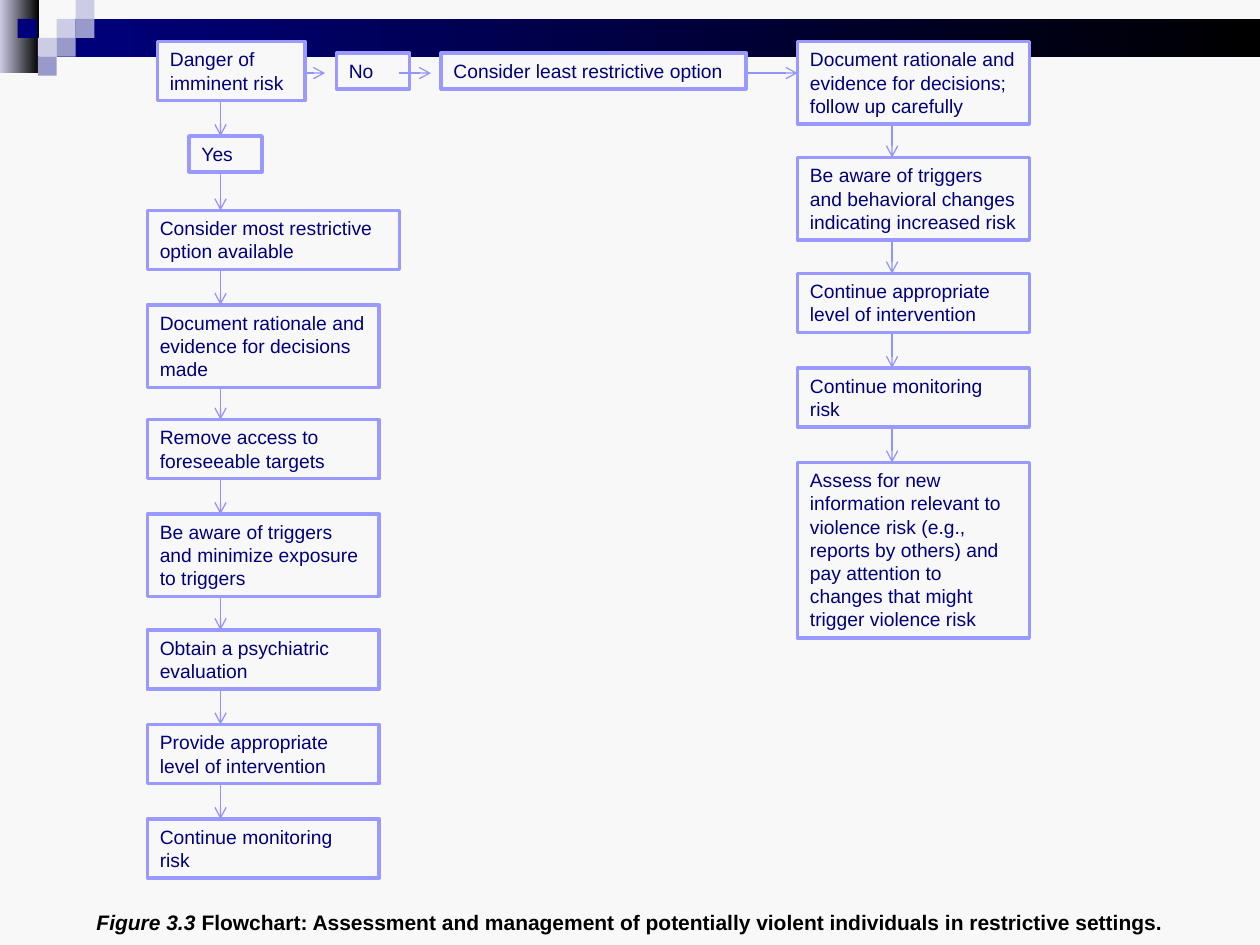
"""Build the flowchart slide on managing potentially violent individuals."""
from dataclasses import dataclass

from lxml import etree
from pptx import Presentation
from pptx.dml.color import RGBColor
from pptx.enum.shapes import MSO_CONNECTOR, MSO_SHAPE
from pptx.enum.text import MSO_ANCHOR, MSO_AUTO_SIZE, PP_ALIGN
from pptx.oxml.ns import qn
from pptx.util import Inches, Pt

RECTANGLE = MSO_SHAPE.RECTANGLE
STRAIGHT = MSO_CONNECTOR.STRAIGHT
TOP = MSO_ANCHOR.TOP
FIT_SHAPE = MSO_AUTO_SIZE.SHAPE_TO_FIT_TEXT
LEFT, CENTER = PP_ALIGN.LEFT, PP_ALIGN.CENTER


@dataclass(frozen=True)
class Theme:
    font: str = "Arial"
    step_size: float = 11
    caption_size: float = 12
    paper: str = "F8F8F8"
    navy: str = "00007D"
    black: str = "000000"
    lavender: str = "CCCCE6"
    violet: str = "9999CC"
    border: str = "9999FF"
    arrow: str = "9393FC"


THEME = Theme()
TILE = 0.15
ARROW_LENGTH = 0.33
ROW_Y = 0.58
STEP_WIDTH = 1.84

# Each step: top, width, left, number of lines, text.
RISK_STEPS = [
    (0.33, 1.17, 1.25, 2, "Danger of imminent risk"),
    (1.08, 0.58, 1.5, 1, "Yes"),
    (1.67, 2, 1.17, 2, "Consider most restrictive option available"),
    (2.42, STEP_WIDTH, 1.17, 3, "Document rationale and evidence for decisions made"),
    (3.33, STEP_WIDTH, 1.17, 2, "Remove access to foreseeable targets"),
    (4.08, STEP_WIDTH, 1.17, 3, "Be aware of triggers and minimize exposure to triggers"),
    (5, STEP_WIDTH, 1.17, 2, "Obtain a psychiatric evaluation"),
    (5.75, STEP_WIDTH, 1.17, 2, "Provide appropriate level of intervention"),
    (6.5, STEP_WIDTH, 1.17, 2, "Continue monitoring risk"),
]
NO_RISK_STEPS = [
    (0.33, STEP_WIDTH, 6.33, 3,
     "Document rationale and evidence for decisions; follow up carefully"),
    (1.25, STEP_WIDTH, 6.33, 3,
     "Be aware of triggers and behavioral changes indicating increased risk"),
    (2.17, STEP_WIDTH, 6.33, 2, "Continue appropriate level of intervention"),
    (2.92, STEP_WIDTH, 6.33, 2, "Continue monitoring risk"),
    (3.67, STEP_WIDTH, 6.33, 7,
     "Assess for new information relevant to violence risk (e.g., reports by "
     "others) and pay attention to changes that might trigger violence risk"),
]
NO_STEP = (0.42, 0.58, 2.67, 1, "No")
LEAST_RESTRICTIVE_STEP = (0.42, 2.42, 3.5, 1, "Consider least restrictive option")


def rgb(value):
    return RGBColor.from_string(value)


def add_text(paragraph, text, *, size, color, bold=False, italic=False, align=LEFT):
    """Append a formatted run to a paragraph."""
    paragraph.alignment = align
    run = paragraph.add_run()
    run.text = text
    run.font.name = THEME.font
    run.font.size = Pt(size)
    run.font.bold = bold
    run.font.italic = italic
    run.font.color.rgb = rgb(color)


def add_block(slide, left, top, width, height, *colors):
    """Add a borderless rectangle, filled solid or left to right with two colours."""
    block = slide.shapes.add_shape(
        RECTANGLE, Inches(left), Inches(top), Inches(width), Inches(height))
    block.shadow.inherit = False
    block.line.fill.background()
    if len(colors) == 1:
        block.fill.solid()
        block.fill.fore_color.rgb = rgb(colors[0])
    else:
        block.fill.gradient()
        block.fill.gradient_angle = 0
        for stop, color, position in zip(block.fill.gradient_stops, colors, (0, 1)):
            stop.color.rgb = rgb(color)
            stop.position = position
    return block


def add_step(slide, top, width, left, lines, text):
    """Add a bordered flowchart step as tall as its lines of text."""
    step = add_block(slide, left, top, width, 0.1 + 0.185 * lines, THEME.paper)
    step.line.color.rgb = rgb(THEME.border)
    step.line.width = Pt(2)
    frame = step.text_frame
    frame.word_wrap = True
    frame.auto_size = FIT_SHAPE
    frame.vertical_anchor = TOP
    add_text(frame.paragraphs[0], text, size=THEME.step_size, color=THEME.navy)


def add_arrow(slide, x1, y1, x2, y2):
    """Add a thin arrow with an open head at its end."""
    arrow = slide.shapes.add_connector(
        STRAIGHT, Inches(x1), Inches(y1), Inches(x2), Inches(y2))
    arrow.line.color.rgb = rgb(THEME.arrow)
    arrow.line.width = Pt(0.75)
    etree.SubElement(arrow.line._get_or_add_ln(), qn("a:tailEnd"), type="arrow")
    etree.SubElement(arrow._element.spPr, qn("a:effectLst"))


def add_header(slide):
    """Add the gradient bands and the mosaic of tiles."""
    add_block(slide, 0, 0, 0.31, 0.58, THEME.lavender, THEME.black)
    add_block(slide, 0.45, 0.15, 9.55, 0.3, THEME.navy, THEME.black)
    tiles = [(3, 1, THEME.lavender), (4, 0, THEME.lavender), (4, 1, THEME.violet),
             (2, 2, THEME.lavender), (3, 2, THEME.violet), (2, 3, THEME.violet)]
    for column, row, color in tiles:
        add_block(slide, column * TILE, row * TILE, TILE, TILE, color)
    add_block(slide, 0.14, TILE, TILE, TILE, THEME.navy)


def add_column(slide, steps, arrow_x):
    """Add steps from top to bottom, with an arrow down to each after the first."""
    for top, *_ in steps[1:]:
        add_arrow(slide, arrow_x, top - ARROW_LENGTH, arrow_x, top)
    for step in steps:
        add_step(slide, *step)


def add_caption(slide):
    """Add the centred figure caption."""
    caption = slide.shapes.add_textbox(Inches(0), Inches(7.17), Inches(10), Inches(0.3))
    frame = caption.text_frame
    frame.word_wrap = True
    frame.auto_size = FIT_SHAPE
    for text, italic in [
            ("Figure 3.3 ", True),
            ("Flowchart: Assessment and management of potentially violent "
             "individuals in restrictive settings.", False)]:
        add_text(frame.paragraphs[0], text, size=THEME.caption_size,
                 color=THEME.black, bold=True, italic=italic, align=CENTER)


def main():
    deck = Presentation()
    deck.slide_width, deck.slide_height = Inches(10), Inches(7.5)
    slide = deck.slides.add_slide(deck.slide_layouts[6])
    slide.background.fill.solid()
    slide.background.fill.fore_color.rgb = rgb(THEME.paper)
    add_header(slide)
    add_step(slide, *NO_STEP)
    for start, end in [(2.33, 2.58), (3.17, 3.42), (5.92, 6.33)]:
        add_arrow(slide, start, ROW_Y, end, ROW_Y)
    add_step(slide, *LEAST_RESTRICTIVE_STEP)
    add_column(slide, RISK_STEPS, 1.75)
    add_column(slide, NO_RISK_STEPS, 7.08)
    add_caption(slide)
    deck.save("out.pptx")


if __name__ == "__main__":
    main()
